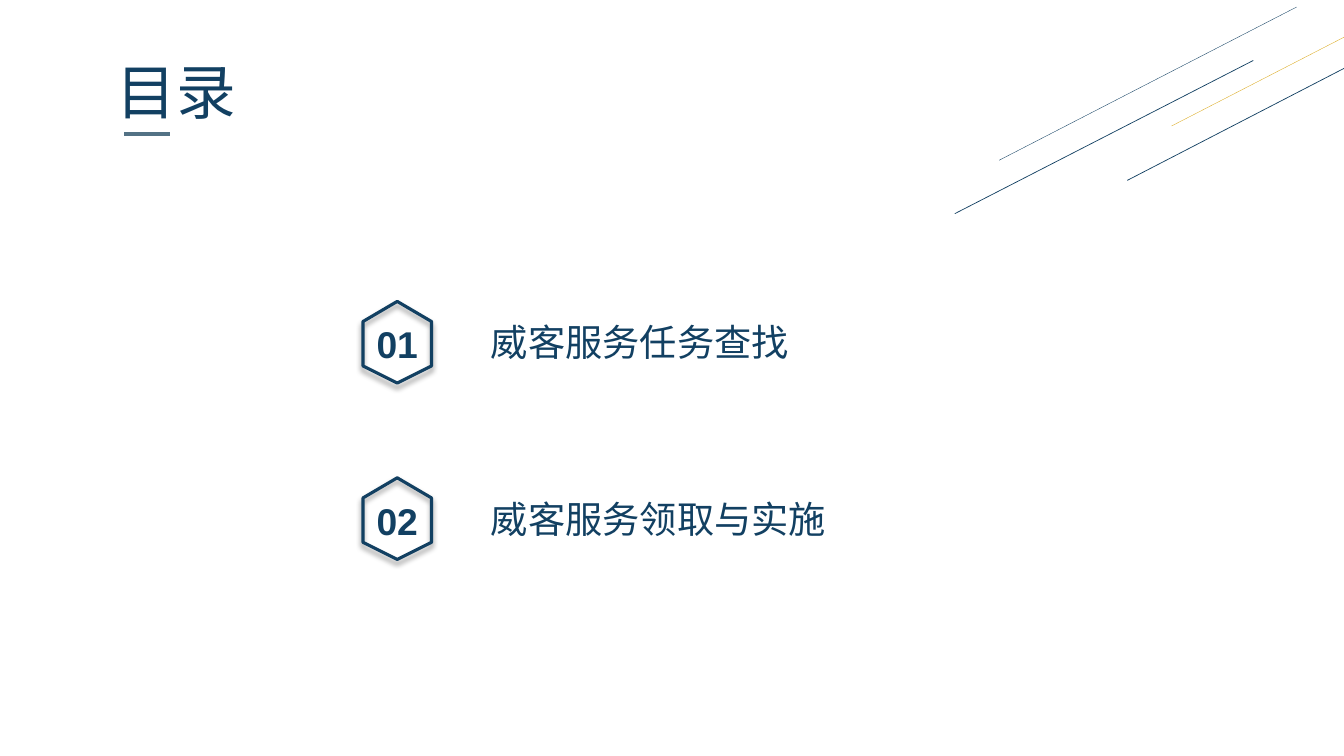
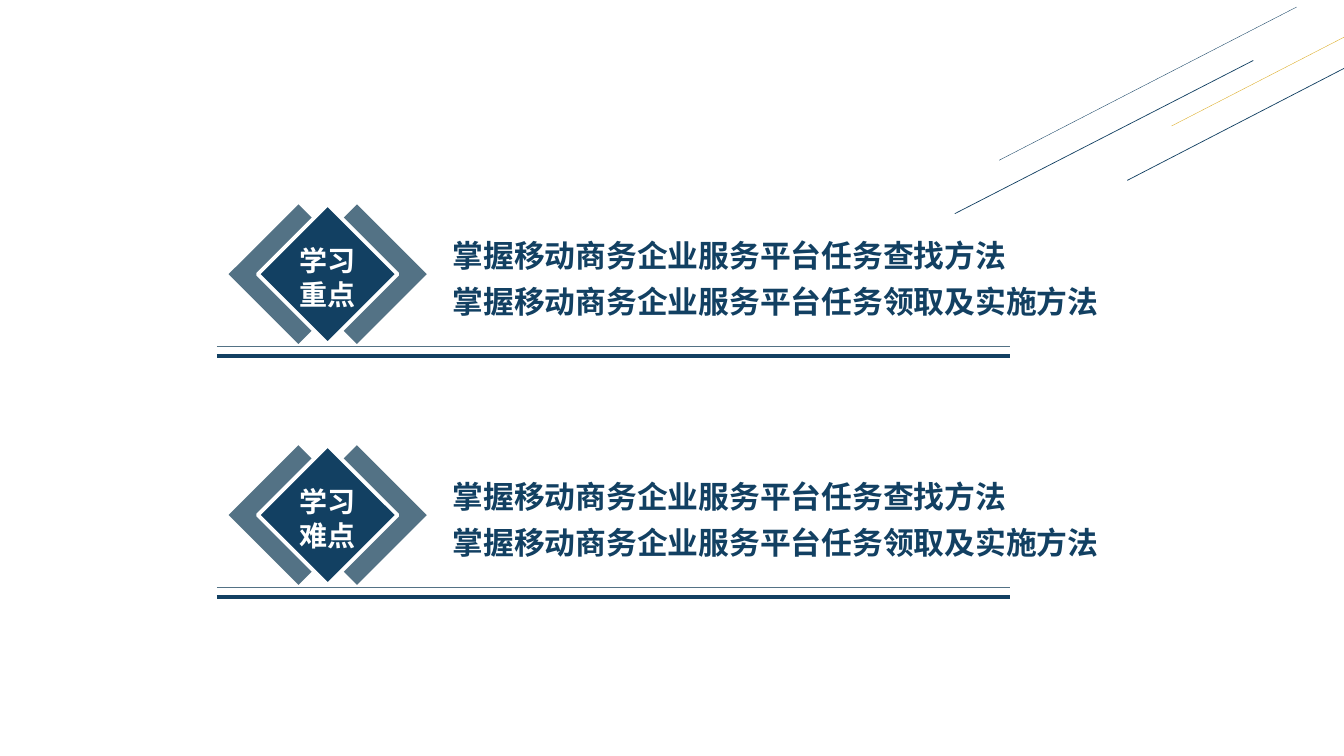
"""Build the contents slide and the learning goals slide of a course deck."""
from dataclasses import dataclass

from lxml.etree import SubElement
from pptx import Presentation
from pptx.dml.color import RGBColor
from pptx.enum.shapes import MSO_CONNECTOR as Connector, MSO_SHAPE as Preset
from pptx.enum.text import MSO_AUTO_SIZE as AutoSize, PP_ALIGN as Align
from pptx.oxml.ns import qn
from pptx.util import Emu, Pt

SCALE = 9144
NAVY, SLATE, GOLD, WHITE = "124062", "537285", "DCAA1F", "FFFFFF"
CJK, LATIN = "Noto Sans CJK SC", "Arial"


@dataclass(frozen=True)
class TextStyle:
    size: float
    font: str = CJK
    color: str = NAVY
    bold: bool = False
    align: Align = Align.LEFT
    spacing: float | None = None
    wrap: bool = False


@dataclass(frozen=True)
class Stroke:
    start: tuple[int, int]
    end: tuple[int, int]
    color: str
    width: float


@dataclass(frozen=True)
class Topic:
    number: str
    name: str
    width: int


@dataclass(frozen=True)
class Goal:
    label: tuple[str, ...]
    points: tuple[str, ...]


TITLE = TextStyle(42.6, wrap=True)
NUMBER = TextStyle(26.6, font=LATIN, bold=True, align=Align.CENTER)
TOPIC = TextStyle(26.6, wrap=True)
LABEL = TextStyle(20, color=WHITE, bold=True)
POINT = TextStyle(22, bold=True, spacing=1.25)

RAYS = (
    Stroke((947, 212), (1243, 60), NAVY, 0.5),
    Stroke((991, 159), (1286, 7), NAVY, 0.25),
    Stroke((1118, 179), (1414, 26), NAVY, 0.5),
    Stroke((1162, 125), (1457, -27), GOLD, 0.25),
)
TOPICS = (Topic("01", "威客服务任务查找", 363), Topic("02", "威客服务领取与实施", 382))
POINTS = ("掌握移动商务企业服务平台任务查找方法", "掌握移动商务企业服务平台任务领取及实施方法")
GOALS = (Goal(("学习", "重点"), POINTS), Goal(("学习", "难点"), POINTS))

HEXAGON = ((34, 0), (68, 20), (68, 64), (34, 81), (0, 64), (0, 20))
TOPIC_TOP, TOPIC_STEP = 299, 175
GOAL_TOP, GOAL_STEP = 223, 239
DIAMOND_LEFT, DIAMOND_SIDE, DIAMOND_SHIFT = 276, 98, 29


def px(value: int) -> Emu:
    return Emu(value * SCALE)


def rgb(color: str) -> RGBColor:
    return RGBColor.from_string(color)


def add_line(page, stroke: Stroke) -> None:
    line = page.shapes.add_connector(
        Connector.STRAIGHT, *(px(value) for value in stroke.start + stroke.end)
    )
    line.line.color.rgb = rgb(stroke.color)
    line.line.width = Pt(stroke.width)
    SubElement(line._element.spPr, qn("a:effectLst"))


def add_text(page, left: int, top: int, width: int, height: int,
             lines: tuple[str, ...], style: TextStyle) -> None:
    box = page.shapes.add_textbox(px(left), px(top), px(width), px(height))
    frame = box.text_frame
    frame.word_wrap = style.wrap
    frame.auto_size = AutoSize.SHAPE_TO_FIT_TEXT
    frame.text = "\n".join(lines)
    for para in frame.paragraphs:
        para.alignment = style.align
        if style.spacing:
            para.line_spacing = style.spacing
        para.font.size = Pt(style.size)
        para.font.bold = style.bold
        para.font.color.rgb = rgb(style.color)
        para.font.name = style.font
        defaults = para._p.pPr.find(qn("a:defRPr"))
        SubElement(defaults, qn("a:ea"), typeface=style.font)


def add_hexagon(page, left: int, top: int) -> None:
    corners = [(left + x, top + y) for x, y in HEXAGON]
    builder = page.shapes.build_freeform(*corners[0], scale=SCALE)
    builder.add_line_segments(corners[1:], close=True)
    hexagon = builder.convert_to_shape()
    hexagon.fill.background()
    hexagon.line.color.rgb = rgb(NAVY)
    hexagon.line.width = Pt(2.25)
    hexagon.shadow.inherit = False
    effects = hexagon._element.spPr.find(qn("a:effectLst"))
    shadow = SubElement(effects, qn("a:outerShdw"), blurRad=str(Pt(4)),
                        dist=str(Pt(3)), dir="5400000", rotWithShape="0")
    shade = SubElement(shadow, qn("a:srgbClr"), val="000000")
    SubElement(shade, qn("a:alpha"), val="40000")


def add_diamond(page, left: int, top: int, color: str, outlined: bool = False) -> None:
    diamond = page.shapes.add_shape(
        Preset.RECTANGLE, px(left), px(top), px(DIAMOND_SIDE), px(DIAMOND_SIDE)
    )
    diamond.rotation = 45
    diamond.shadow.inherit = False
    diamond.fill.solid()
    diamond.fill.fore_color.rgb = rgb(color)
    if outlined:
        diamond.line.color.rgb = rgb(WHITE)
        diamond.line.width = Pt(2.75)
    else:
        diamond.line.fill.background()


def add_topic(page, topic: Topic, top: int) -> None:
    add_hexagon(page, 360, top)
    add_text(page, 363, top + 15, 62, 55, (topic.number,), NUMBER)
    add_text(page, 477, top + 13, topic.width, 55, (topic.name,), TOPIC)


def add_rule(page, y: int, color: str, width: float) -> None:
    add_line(page, Stroke((215, y), (1002, y), color, width))


def add_goal(page, goal: Goal, top: int) -> None:
    add_rule(page, top + 121, SLATE, 1)
    for shift in (DIAMOND_SHIFT, -DIAMOND_SHIFT):
        add_diamond(page, DIAMOND_LEFT + shift, top, SLATE)
    add_diamond(page, DIAMOND_LEFT, top, NAVY, outlined=True)
    add_text(page, 287, top + 14, 76, 77, goal.label, LABEL)
    add_rule(page, top + 130, NAVY, 3)
    add_text(page, 439, top - 2, 662, 102, goal.points, POINT)


def add_page(deck):
    page = deck.slides.add_slide(deck.slide_layouts[6])
    for ray in RAYS:
        add_line(page, ray)
    return page


def main() -> None:
    deck = Presentation()
    deck.slide_width, deck.slide_height = px(1333), px(750)

    contents = add_page(deck)
    add_text(contents, 106, 49, 153, 82, ("目录",), TITLE)
    add_line(contents, Stroke((123, 133), (169, 133), SLATE, 2.25))
    for index, topic in enumerate(TOPICS):
        add_topic(contents, topic, TOPIC_TOP + index * TOPIC_STEP)

    goals = add_page(deck)
    for index, goal in enumerate(GOALS):
        add_goal(goals, goal, GOAL_TOP + index * GOAL_STEP)

    deck.save("out.pptx")


if __name__ == "__main__":
    main()
